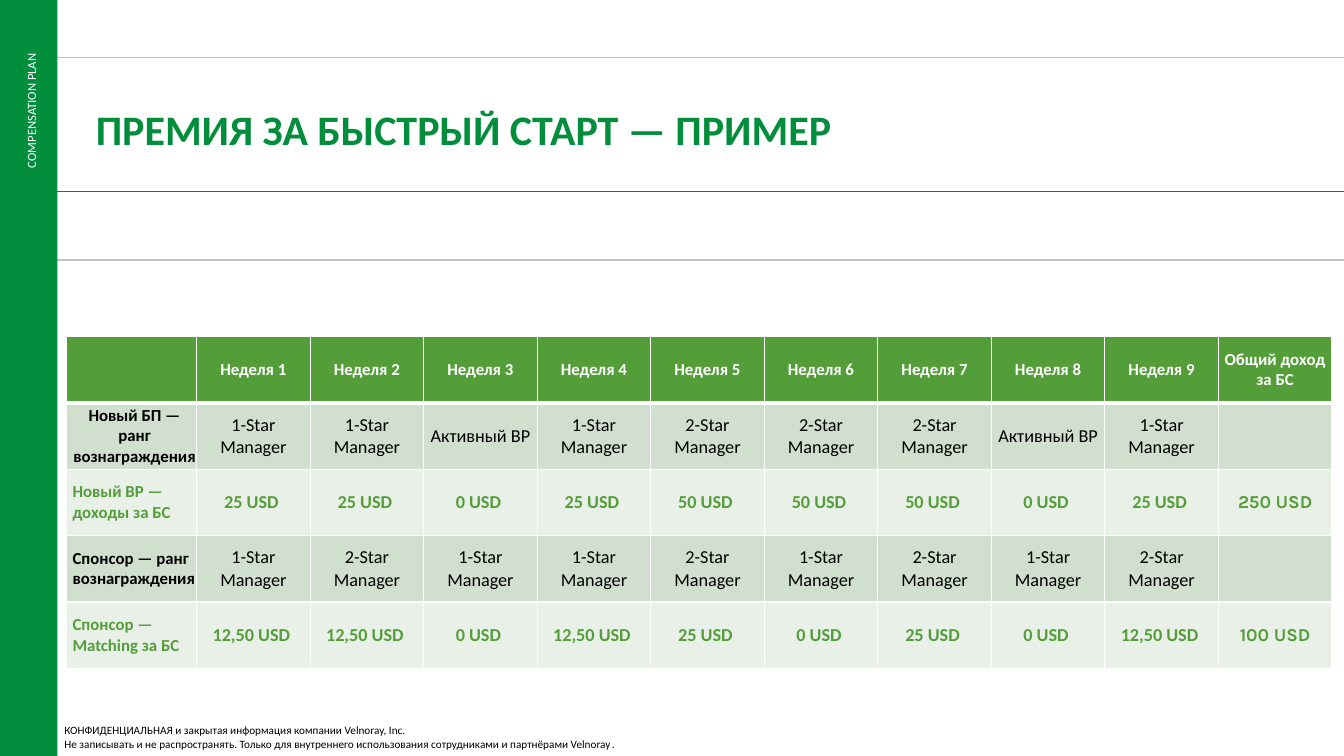
from dataclasses import dataclass

from lxml import etree
from pptx import Presentation
from pptx import util as u
from pptx.dml.color import RGBColor
from pptx.enum import shapes, text
from pptx.oxml.ns import qn


@dataclass(frozen=True)
class Theme:
    """Colours, fonts and type sizes of the deck."""
    green: str = "008E3D"
    leaf: str = "549E39"
    mint: str = "D1DFCE"
    pale: str = "E9F0E8"
    white: str = "FFFFFF"
    black: str = "000000"
    ink: str = "0D0D0D"
    grey: str = "BFBFBF"
    main: str = "Calibri"
    total: str = "Karla"
    dot: str = "Arial"
    title: int = 30
    value: int = 13
    label: int = 12
    side: int = 9
    note: int = 8


THEME = Theme()
MID, LEFT, RIGHT = text.PP_ALIGN.CENTER, text.PP_ALIGN.LEFT, text.PP_ALIGN.RIGHT
WEEKS = [f"Неделя {n}" for n in range(1, 10)]
ONE, TWO, BASE = "1-Star Manager", "2-Star Manager", "Активный BP"
HEAD = [""] + WEEKS + ["Общий доход за БС"]
ROWS = [
    ("Новый БП — ранг вознаграждения", [ONE, ONE, BASE, ONE, TWO, TWO, TWO, BASE, ONE], ""),
    ("Новый BP — доходы за БС", ["25", "25", "0", "25", "50", "50", "50", "0", "25"], "250 USD"),
    ("Спонсор — ранг вознаграждения", [ONE, TWO, ONE, ONE, TWO, ONE, TWO, ONE, TWO], ""),
    ("Спонсор — Matching за БС",
     ["12,50", "12,50", "0", "12,50", "25", "0", "25", "0", "12,50"], "100 USD"),
]
NOTES = [
    "КОНФИДЕНЦИАЛЬНАЯ и закрытая информация компании Velnoray, Inc.",
    "Не записывать и не распространять. Только для внутреннего использования "
    "сотрудниками и партнёрами Velnoray",
]


def style(para, size, color, bold=False, align=LEFT, face=THEME.main):
    """Set the font and alignment of a paragraph."""
    para.alignment = align
    font = para.font
    font.name, font.size, font.bold = face, u.Pt(size), bold
    font.color.rgb = RGBColor.from_string(color)


def rule(slide, left, right, top, color, alpha=None):
    """Draw a thin level line, partly clear if alpha is given."""
    line = slide.shapes.add_connector(
        shapes.MSO_CONNECTOR.STRAIGHT,
        u.Inches(left), u.Inches(top), u.Inches(right), u.Inches(top))
    line.line.width = u.Pt(0.5)
    line.line.color.rgb = RGBColor.from_string(color)
    props = line._element.spPr
    if alpha:
        tint = props.find(".//" + qn("a:srgbClr"))
        etree.SubElement(tint, qn("a:alpha"), val=str(alpha * 1000))
    etree.SubElement(props, qn("a:effectLst"))


def side_bar(slide, left, top, width, height):
    """Draw the green band with its upright caption."""
    band = slide.shapes.add_shape(
        shapes.MSO_SHAPE.RECTANGLE,
        u.Inches(left), u.Inches(top), u.Inches(width), u.Inches(height))
    band.shadow.inherit = False
    band.fill.solid()
    band.fill.fore_color.rgb = RGBColor.from_string(THEME.green)
    band.line.fill.background()
    box = slide.shapes.add_textbox(
        u.Inches(left - 0.51), u.Inches(top + 1.13), u.Inches(1.64), u.Inches(0.25))
    box.rotation = 270
    box.text_frame.word_wrap = True
    para = box.text_frame.paragraphs[0]
    para.text = "COMPENSATION PLAN"
    style(para, THEME.side, THEME.white, align=RIGHT)


def heading(slide, left, top, width, height):
    """Place the slide title."""
    title = slide.shapes.title
    title.left, title.top = u.Inches(left), u.Inches(top)
    title.width, title.height = u.Inches(width), u.Inches(height)
    frame = title.text_frame
    frame.word_wrap = True
    frame.auto_size = text.MSO_AUTO_SIZE.NONE
    frame.vertical_anchor = text.MSO_ANCHOR.MIDDLE
    para = frame.paragraphs[0]
    para.text = "ПРЕМИЯ ЗА БЫСТРЫЙ СТАРТ — ПРИМЕР"
    para.line_spacing = 0.9
    style(para, THEME.title, THEME.green, True)


def border(cell, low):
    """Give a cell white edges, with the lower one low points wide."""
    props = cell._tc.get_or_add_tcPr()
    for spot, side in enumerate("LRTB"):
        width = low if side == "B" else 1
        edge = etree.Element(qn(f"a:ln{side}"), w=str(u.Pt(width)))
        fill = etree.SubElement(edge, qn("a:solidFill"))
        etree.SubElement(fill, qn("a:srgbClr"), val=THEME.white)
        props.insert(spot, edge)


def put(cell, words, fill, low=1, inset=0, **look):
    """Fill a table cell and write its words."""
    cell.fill.solid()
    cell.fill.fore_color.rgb = RGBColor.from_string(fill)
    border(cell, low)
    cell.vertical_anchor = text.MSO_ANCHOR.MIDDLE
    cell.margin_left = u.Inches(inset)
    cell.margin_right = cell.margin_top = cell.margin_bottom = 0
    if words:
        para = cell.text_frame.paragraphs[0]
        para.text = words
        style(para, **look)


def bonus_table(slide, left, top, width, height):
    """Build the weekly bonus table."""
    count, first = len(HEAD), 1.29
    grid = slide.shapes.add_table(
        len(ROWS) + 1, count, u.Inches(left), u.Inches(top),
        u.Inches(width), u.Inches(height)).table
    grid.horz_banding = False
    for col in range(count):
        grid.columns[col].width = u.Inches((width - first) / (count - 1) if col else first)
        put(grid.cell(0, col), HEAD[col], THEME.leaf, low=3,
            size=THEME.label, color=THEME.white, bold=True, align=MID)
    for row, (name, values, total) in enumerate(ROWS, 1):
        money = row % 2 == 0
        fill, color = (THEME.pale, THEME.leaf) if money else (THEME.mint, THEME.black)
        put(grid.cell(row, 0), name, fill, inset=0.06, size=THEME.label,
            color=color, bold=True, align=MID if row == 1 else LEFT)
        for col, value in enumerate(values, 1):
            put(grid.cell(row, col), f"{value} USD " if money else value, fill,
                size=THEME.value, color=color, bold=money, align=MID)
        put(grid.cell(row, count - 1), total, fill, size=THEME.value,
            color=color, bold=True, align=MID, face=THEME.total)


def footer(slide, left, top, width, height):
    """Write the notice at the foot of the slide."""
    frame = slide.shapes.add_textbox(
        u.Inches(left), u.Inches(top), u.Inches(width), u.Inches(height)).text_frame
    frame.word_wrap = True
    for row, words in enumerate(NOTES):
        para = frame.add_paragraph() if row else frame.paragraphs[0]
        para.text = words
        style(para, THEME.note, THEME.black)
    stop = para.add_run()
    stop.text = "."
    stop.font.name = THEME.dot


def main():
    """Build and save the deck."""
    deck = Presentation()
    deck.slide_width, deck.slide_height = u.Inches(13.33), u.Inches(7.5)
    slide = deck.slides.add_slide(deck.slide_layouts[5])
    for top, color, alpha in ((2.58, THEME.ink, 70), (1.9, THEME.ink, 70),
                              (0.57, THEME.grey, None)):
        rule(slide, 0.56, 13.33, top, color, alpha)
    side_bar(slide, 0, 0, 0.57, 7.53)
    heading(slide, 0.85, 1.06, 8.97, 0.49)
    bonus_table(slide, 0.66, 3.34, 12.55, 3.29)
    footer(slide, 0.54, 7.13, 6.13, 0.37)
    deck.save("out.pptx")


if __name__ == "__main__":
    main()
